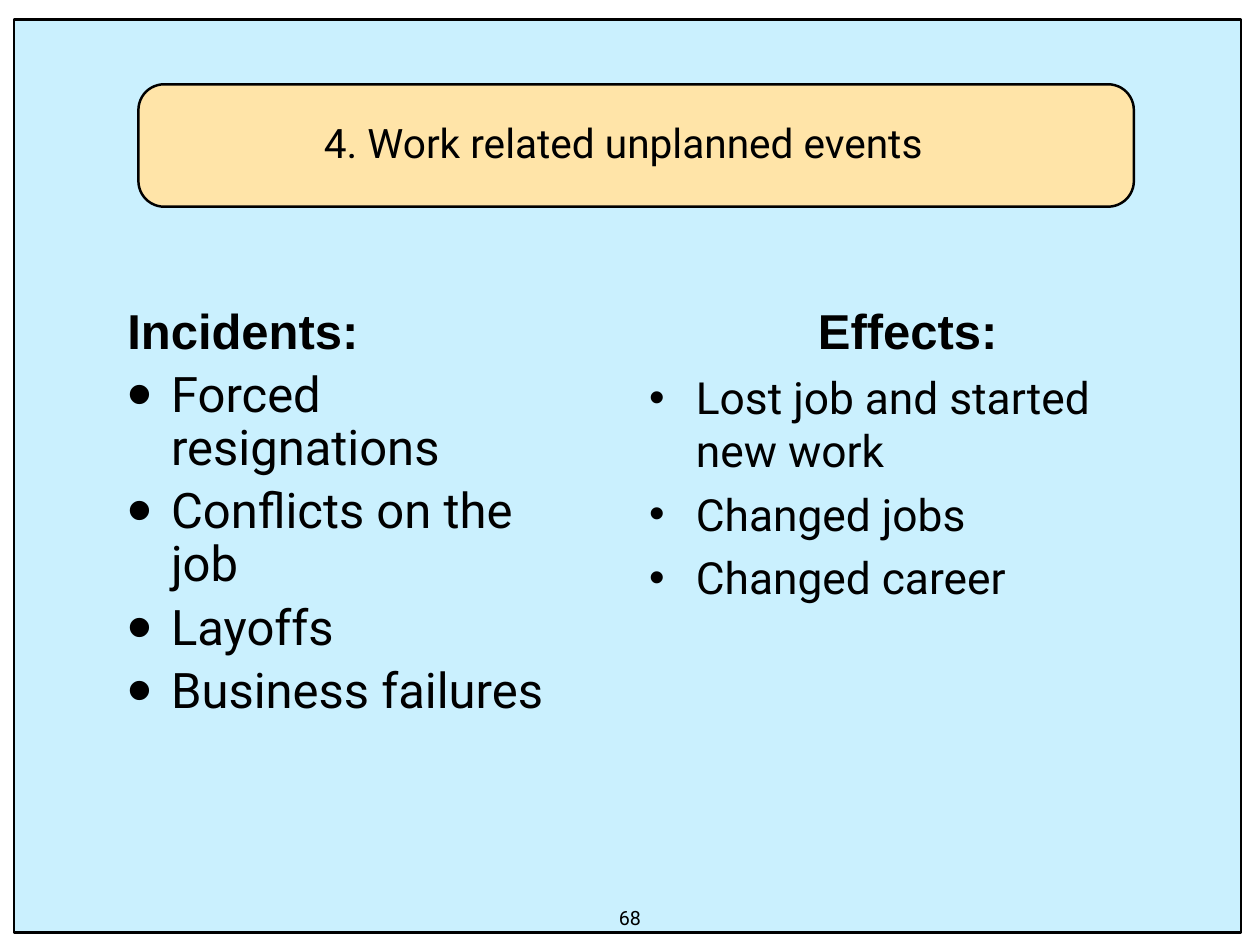
from lxml.etree import SubElement
from pptx import Presentation
from pptx.dml.color import RGBColor
from pptx.enum.shapes import MSO_SHAPE as SHAPE
from pptx.enum.text import MSO_ANCHOR as ANCHOR, MSO_AUTO_SIZE as AUTO, PP_ALIGN as ALIGN
from pptx.oxml.ns import qn
from pptx.util import Pt

COLORS = {"page": "FFFFFF", "panel": "CAF0FE", "banner": "FFE4A8", "ink": "000000"}


def color(name):
    """Return the named colour."""
    return RGBColor.from_string(COLORS[name])


def write(tf, text, first=False, font="Roboto", size=36, bold=False,
          align=ALIGN.LEFT, before=0, spacing=1.0, hang=0, bullet=None):
    """Write one formatted paragraph, with an optional bullet size in percent."""
    p = tf.paragraphs[0] if first else tf.add_paragraph()
    p.alignment = align
    p.space_before = Pt(before)
    p.line_spacing = spacing
    r = p.add_run()
    r.text = text
    r.font.name = font
    r.font.size = Pt(size)
    r.font.bold = bold
    r.font.color.rgb = color("ink")
    pPr = p._p.get_or_add_pPr()
    if hang:
        pPr.set("marL", str(Pt(hang)))
        pPr.set("indent", str(-Pt(hang)))
    if bullet:
        SubElement(pPr, qn("a:buSzPct")).set("val", str(bullet * 1000))
        SubElement(pPr, qn("a:buFont")).set("typeface", "Arial")
        SubElement(pPr, qn("a:buChar")).set("char", "•")


class Deck:
    """Hold the style and the current slide."""

    def __init__(self, width, height):
        """Start a presentation with one title-only slide."""
        self.prs = Presentation()
        self.prs.slide_width, self.prs.slide_height = Pt(width), Pt(height)
        self.s = self.prs.slides.add_slide(self.prs.slide_layouts[5])
        fill = self.s.background.fill
        fill.solid()
        fill.fore_color.rgb = color("page")

    def panel(self, kind, box, fill, radius=None):
        """Add a filled and outlined shape."""
        sp = self.s.shapes.add_shape(kind, *map(Pt, box))
        sp.shadow.inherit = False
        sp.fill.solid()
        sp.fill.fore_color.rgb = color(fill)
        sp.line.color.rgb = color("ink")
        sp.line.width = Pt(2)
        if radius is not None:
            sp.adjustments[0] = radius

    def frame(self, sp, anchor=ANCHOR.TOP, wrap=True):
        """Set up the text frame of a shape."""
        tf = sp.text_frame
        tf.auto_size = AUTO.NONE
        tf.word_wrap = wrap
        tf.vertical_anchor = anchor
        tf.margin_left = tf.margin_right = tf.margin_top = tf.margin_bottom = Pt(4)
        return tf

    def title(self, text, box):
        """Place the title in front of the panels."""
        sp = self.s.shapes.title
        sp.left, sp.top, sp.width, sp.height = map(Pt, box)
        sp.element.getparent().append(sp.element)
        write(self.frame(sp, ANCHOR.MIDDLE), text, first=True, size=33, align=ALIGN.CENTER)

    def text(self, box, **frame):
        """Add a text box and return its text frame."""
        return self.frame(self.s.shapes.add_textbox(*map(Pt, box)), **frame)

    def column(self, heading, items, box, size, bullet, hang, spacing=1.0,
               align=ALIGN.LEFT, anchor=ANCHOR.TOP):
        """Add a bold heading with a bulleted list below it."""
        tf = self.text(box, anchor=anchor)
        rhythm = dict(before=8.5, spacing=spacing, hang=hang)
        write(tf, heading, first=True, font="Arial", size=39.8, bold=True,
              align=align, **rhythm)
        for item in items:
            write(tf, item, size=size, bullet=bullet, **rhythm)


def main():
    """Build the slide and save it."""
    deck = Deck(1024, 768)
    deck.panel(SHAPE.RECTANGLE, (11.5, 16, 997, 742), "panel")
    deck.panel(SHAPE.ROUNDED_RECTANGLE, (112.5, 68.5, 809, 99.5), "banner", radius=0.21)
    deck.title("4. Work related unplanned events ", (144.5, 52, 732.5, 128))
    deck.column("Incidents:",
                ["Forced resignations", "Conflicts on the job", "Layoffs", "Business failures"],
                (99.5, 242, 381, 350), size=39.8, bullet=145, hang=35.5,
                spacing=0.9, anchor=ANCHOR.MIDDLE)
    deck.column("Effects:",
                ["Lost job and started new work", "Changed jobs", "Changed career"],
                (523.5, 240.5, 428.5, 258.5), size=36, bullet=100, hang=38,
                align=ALIGN.CENTER)
    write(deck.text((499, 732, 26, 27.5), wrap=False), "68", first=True, size=16,
          align=ALIGN.CENTER)
    deck.prs.save("out.pptx")


if __name__ == "__main__":
    main()
